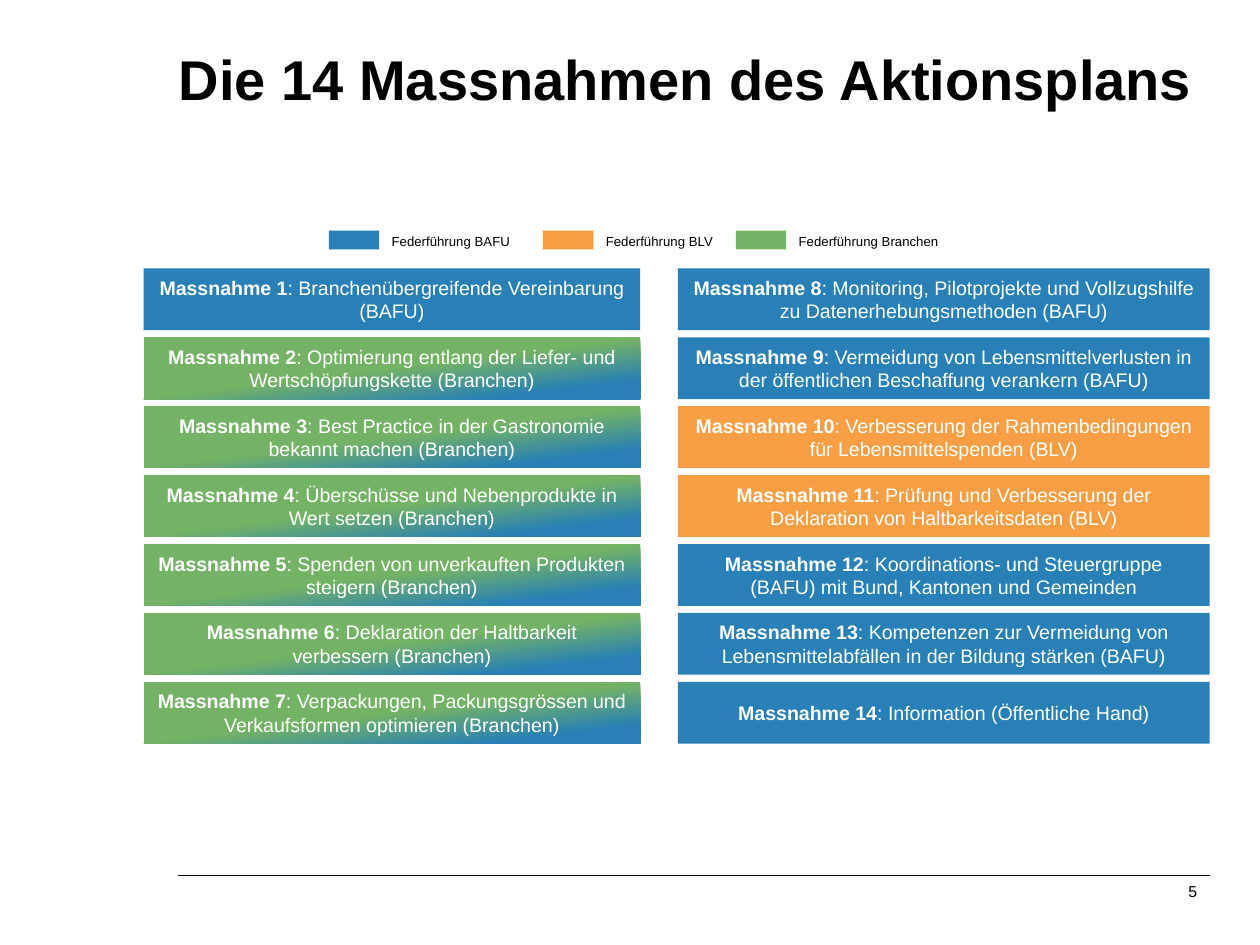
from lxml.etree import SubElement
from pptx import Presentation
from pptx.dml.color import RGBColor
from pptx.enum.shapes import MSO_CONNECTOR, MSO_SHAPE
from pptx.enum.text import MSO_ANCHOR, PP_ALIGN
from pptx.oxml.ns import qn
from pptx.util import Inches, Pt

BLUE = RGBColor(0x28, 0x80, 0xB6)
ORANGE = RGBColor(0xF8, 0x9F, 0x46)
GREEN = RGBColor(0x74, 0xB3, 0x65)
WHITE = RGBColor(0xFF, 0xFF, 0xFF)
BLACK = RGBColor(0x00, 0x00, 0x00)
BLEND = [(0, GREEN), (50, GREEN), (85, BLUE), (100, BLUE)]

WIDE, HIGH = 10, 7.5
PITCH, ROW = 0.547, 0.49  # row step and row height

LEFT = [
    ("Branchenübergreifende Vereinbarung (BAFU)", BLUE),
    ("Optimierung entlang der Liefer- und Wertschöpfungskette (Branchen)", BLEND),
    ("Best Practice in der Gastronomie bekannt machen (Branchen)", BLEND),
    ("Überschüsse und Nebenprodukte in Wert setzen (Branchen)", BLEND),
    ("Spenden von unverkauften Produkten steigern (Branchen)", BLEND),
    ("Deklaration der Haltbarkeit verbessern (Branchen)", BLEND),
    ("Verpackungen, Packungsgrössen und Verkaufsformen optimieren (Branchen)", BLEND),
]
RIGHT = [
    ("Monitoring, Pilotprojekte und Vollzugshilfe zu Datenerhebungsmethoden (BAFU)", BLUE),
    ("Vermeidung von Lebensmittelverlusten in der öffentlichen Beschaffung verankern (BAFU)", BLUE),
    ("Verbesserung der Rahmenbedingungen für Lebensmittelspenden (BLV)", ORANGE),
    ("Prüfung und Verbesserung der Deklaration von Haltbarkeitsdaten (BLV)", ORANGE),
    ("Koordinations- und Steuergruppe (BAFU) mit Bund, Kantonen und Gemeinden", BLUE),
    ("Kompetenzen zur Vermeidung von Lebensmittelabfällen in der Bildung stärken (BAFU)", BLUE),
    ("Information (Öffentliche Hand)", BLUE),
]
KEYS = [
    (0, "Federführung BAFU", 1.17, BLUE),
    (1.7, "Federführung BLV", 1.06, ORANGE),
    (3.23, "Federführung Branchen", 1.31, GREEN),
]


def style(thing, **form):
    for name, value in form.items():
        setattr(thing, name, value)


def write(para, text, size, color, bold=False):
    run = para.add_run()
    run.text = text
    style(run.font, name="Arial", size=Pt(size), bold=bold)
    run.font.color.rgb = color


def blend(shape, stops, angle):
    """Fill a shape with a linear gradient, angle clockwise in degrees."""
    shape.fill.gradient()
    grad = shape._element.spPr.find(qn("a:gradFill"))
    for child in list(grad):
        grad.remove(child)
    group = SubElement(grad, qn("a:gsLst"))
    for share, color in stops:
        stop = SubElement(group, qn("a:gs"), pos=str(share * 1000))
        SubElement(stop, qn("a:srgbClr"), val=str(color))
    SubElement(grad, qn("a:lin"), ang=str(angle * 60000), scaled="0")


def block(slide, box, paint):
    shape = slide.shapes.add_shape(MSO_SHAPE.RECTANGLE, *map(Inches, box))
    shape.shadow.inherit = False
    shape.line.fill.background()
    if paint is BLEND:
        blend(shape, paint, 83)
    else:
        shape.fill.solid()
        shape.fill.fore_color.rgb = paint
    return shape


def label(slide, box, text, size, bold=False, align=PP_ALIGN.LEFT, **form):
    frame = slide.shapes.add_textbox(*map(Inches, box)).text_frame
    style(frame, **{"word_wrap": True, **form})
    para = frame.paragraphs[0]
    para.alignment = align
    write(para, text, size, BLACK, bold)


def column(slide, box, items, first):
    """Stack numbered measures downwards in the box."""
    left, top, wide = box
    for row, (text, paint) in enumerate(items):
        shape = block(slide, (left, top + row * PITCH, wide, ROW), paint)
        style(shape.text_frame, word_wrap=True, vertical_anchor=MSO_ANCHOR.MIDDLE)
        para = shape.text_frame.paragraphs[0]
        para.alignment = PP_ALIGN.CENTER
        write(para, f"Massnahme {first + row}", 11.2, WHITE, True)
        write(para, f": {text}", 11.2, WHITE)


def legend(slide, left, top):
    """Colour keys, each a swatch with its label."""
    for shift, text, wide, paint in KEYS:
        block(slide, (left + shift, top + 0.03, 0.4, 0.15), paint)
        label(slide, (left + shift + 0.4, top, wide, 0.23), text, 7.5, word_wrap=False)


def footer(slide, left, top, right):
    """Rule with the page number below it."""
    rule = slide.shapes.add_connector(
        MSO_CONNECTOR.STRAIGHT, *map(Inches, (right, top, left, top)))
    rule.line.color.rgb = BLACK
    rule.line.width = Pt(0.75)
    SubElement(rule._element.spPr, qn("a:effectLst"))
    label(slide, (right - 2.55, top + 0.05, 2.45, 0.16), "5", 9, align=PP_ALIGN.RIGHT,
          **FLAT)


FLAT = dict.fromkeys(("margin_left", "margin_top", "margin_right", "margin_bottom"), 0)


def main():
    deck = Presentation()
    style(deck, slide_width=Inches(WIDE), slide_height=Inches(HIGH))
    slide = deck.slides.add_slide(deck.slide_layouts[6])
    footer(slide, 1.41, 6.95, 9.6)
    label(slide, (1.42, 0.35, 8.16, 1.08), "Die 14 Massnahmen des Aktionsplans", 32,
          bold=True, **FLAT)
    column(slide, (1.14, 2.13, 3.94), LEFT, 1)
    column(slide, (5.38, 2.13, 4.22), RIGHT, len(LEFT) + 1)
    legend(slide, 2.61, 1.8)
    deck.save("out.pptx")


if __name__ == "__main__":
    main()
